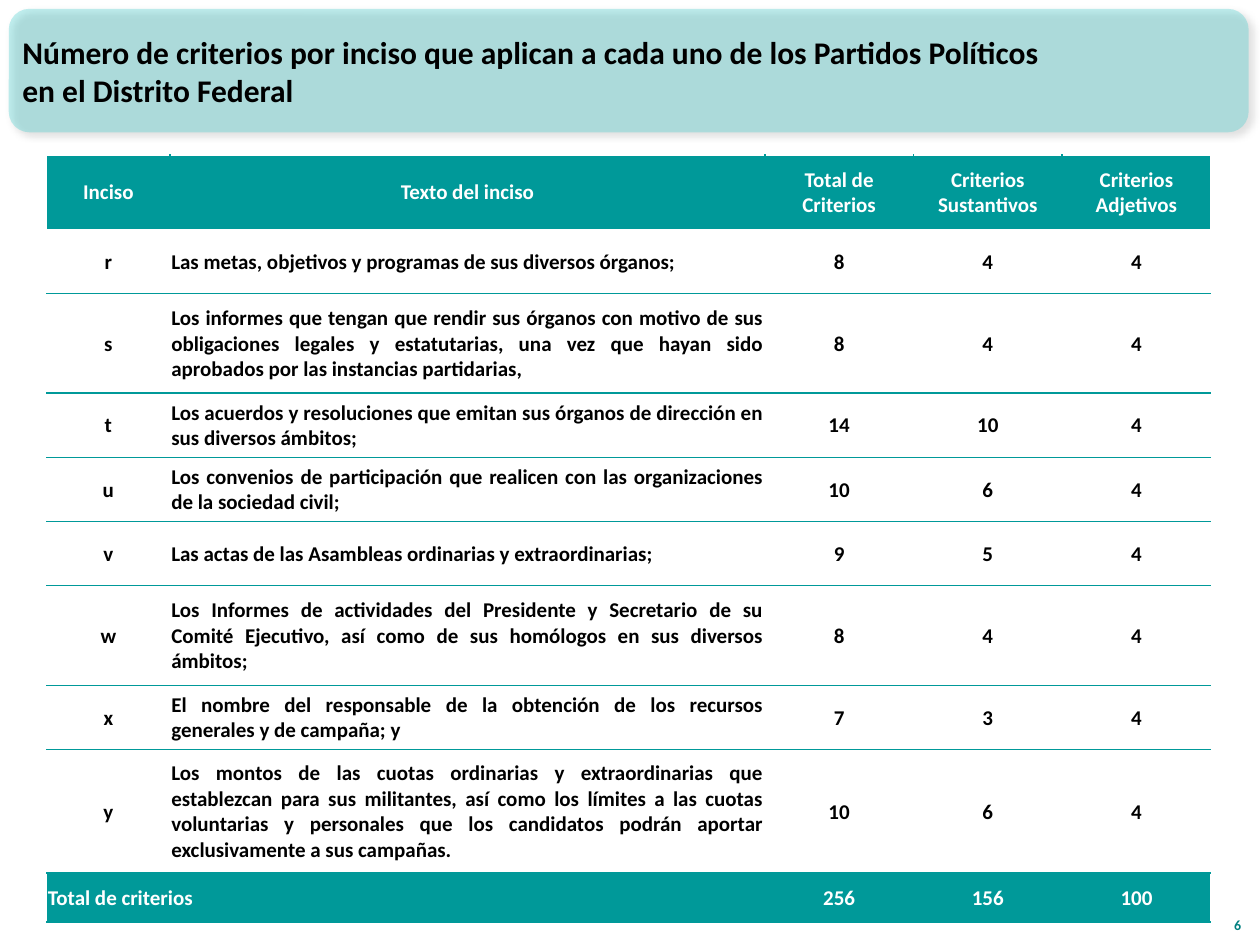
from dataclasses import dataclass

from lxml.etree import SubElement
from pptx import Presentation
from pptx.dml.color import RGBColor
from pptx.enum.shapes import MSO_SHAPE
from pptx.enum.text import MSO_ANCHOR, PP_ALIGN
from pptx.oxml.ns import qn
from pptx.util import Inches, Pt


@dataclass(frozen=True)
class Theme:
    face: str = "Calibri"
    teal: str = "009999"
    aqua: str = "33CCCC"
    deep: str = "008080"
    white: str = "FFFFFF"
    black: str = "000000"
    title: int = 18
    body: int = 12
    small: int = 8


THEME = Theme()
WIDTHS = [0.98, 4.72, 1.18, 1.18, 1.18]
HEIGHTS = [0.59, 0.51, 0.79, 0.51, 0.51, 0.51, 0.79, 0.51, 0.98, 0.39]
ROWS = [
    ("Inciso", "Texto del inciso", "Total de Criterios", "Criterios Sustantivos", "Criterios Adjetivos"),
    ("r", "Las metas, objetivos y programas de sus diversos órganos;", 8, 4, 4),
    ("s", "Los informes que tengan que rendir sus órganos con motivo de sus obligaciones legales y "
          "estatutarias, una vez que hayan sido aprobados por las instancias partidarias,", 8, 4, 4),
    ("t", "Los acuerdos y resoluciones que emitan sus órganos de dirección en sus diversos ámbitos;", 14, 10, 4),
    ("u", "Los convenios de participación que realicen con las organizaciones de la sociedad civil;", 10, 6, 4),
    ("v", "Las actas de las Asambleas ordinarias y extraordinarias;", 9, 5, 4),
    ("w", "Los Informes de actividades del Presidente y Secretario de su Comité Ejecutivo, "
          "así como de sus homólogos en sus diversos ámbitos;", 8, 4, 4),
    ("x", "El nombre del responsable de la obtención de los recursos generales y de campaña; y", 7, 3, 4),
    ("y", "Los montos de las cuotas ordinarias y extraordinarias que establezcan para sus militantes, "
          "así como los límites a las cuotas voluntarias y personales que los candidatos podrán aportar "
          "exclusivamente a sus campañas.", 10, 6, 4),
    ("Total de criterios", "", 256, 156, 100),
]


def apply(item, values):
    for name, value in values.items():
        setattr(item, name, value)


def write(frame, text, size, color, align):
    frame.text = text
    line = frame.paragraphs[0]
    line.alignment = align
    apply(line.font, {"name": THEME.face, "size": Pt(size), "bold": True})
    line.font.color.rgb = RGBColor.from_string(color)


def add_label(slide, box, text, size, color, align, anchor):
    frame = slide.shapes.add_textbox(*map(Inches, box)).text_frame
    apply(frame, {"word_wrap": True, "vertical_anchor": anchor})
    write(frame, text, size, color, align)


def add_tint(parent, color, alpha):
    tint = SubElement(parent, qn("a:srgbClr"), val=color)
    SubElement(tint, qn("a:alpha"), val=str(alpha * 1000))


def add_banner(slide, box):
    shape = slide.shapes.add_shape(MSO_SHAPE.ROUNDED_RECTANGLE, *map(Inches, box))
    shape.shadow.inherit = False
    shape.line.fill.background()
    shape.fill.solid()
    props = shape.element.spPr
    fill = props.find(qn("a:solidFill"))
    fill.clear()
    add_tint(fill, THEME.aqua, 30)
    shade = SubElement(props.find(qn("a:effectLst")), qn("a:outerShdw"),
                       blurRad=str(Pt(4)), dist=str(Pt(3)), dir="2700000",
                       algn="tl", rotWithShape="0")
    add_tint(shade, THEME.black, 40)


def add_edge(cell, side, color, width):
    edge = SubElement(cell._tc.get_or_add_tcPr(), qn(f"a:ln{side}"), w=str(Pt(width)))
    if color:
        fill = SubElement(edge, qn("a:solidFill"))
        SubElement(fill, qn("a:srgbClr"), val=color)
    else:
        SubElement(edge, qn("a:noFill"))


def edge_cell(cell, row, col):
    inner = THEME.teal if row == 0 else None
    edges = {
        "L": (THEME.white, 0.75) if col == 0 else (inner, 1),
        "R": (THEME.white, 0.75) if col == len(WIDTHS) - 1 else (inner, 1),
        "T": (THEME.white, 0.75) if row == 0 else (None if row == 1 else THEME.teal, 1),
        "B": (None if row == 0 else THEME.teal, 1),
    }
    for side, (color, width) in edges.items():
        add_edge(cell, side, color, width)


def fill_cell(cell, text, row, col):
    band = row in (0, len(ROWS) - 1)
    apply(cell, {"margin_left": Inches(0.01), "margin_right": Inches(0.01),
                 "margin_top": Inches(0.01), "margin_bottom": 0,
                 "vertical_anchor": MSO_ANCHOR.MIDDLE})
    edge_cell(cell, row, col)
    if band:
        cell.fill.solid()
        cell.fill.fore_color.rgb = RGBColor.from_string(THEME.teal)
    else:
        cell.fill.background()
    align = PP_ALIGN.CENTER
    if cell.is_merge_origin:
        align = PP_ALIGN.LEFT
    elif col == 1 and not band:
        align = PP_ALIGN.JUSTIFY
    write(cell.text_frame, str(text), THEME.body, THEME.white if band else THEME.black, align)


def add_grid(slide, left, top):
    size = map(Inches, (left, top, sum(WIDTHS), sum(HEIGHTS)))
    table = slide.shapes.add_table(len(ROWS), len(WIDTHS), *size).table
    apply(table, {"first_row": False, "horz_banding": False})
    for col, width in zip(table.columns, WIDTHS):
        col.width = Inches(width)
    for row, height in zip(table.rows, HEIGHTS):
        row.height = Inches(height)
    last = len(ROWS) - 1
    table.cell(last, 0).merge(table.cell(last, 1))
    for row, texts in enumerate(ROWS):
        for col, text in enumerate(texts):
            fill_cell(table.cell(row, col), text, row, col)


def main():
    deck = Presentation()
    apply(deck, {"slide_width": Inches(10), "slide_height": Inches(7.5)})
    slide = deck.slides.add_slide(deck.slide_layouts[6])
    add_banner(slide, (0.07, 0.07, 9.84, 0.98))
    add_label(slide, (9.55, 7.06, 0.4, 0.4), "6", THEME.small, THEME.deep,
              PP_ALIGN.RIGHT, MSO_ANCHOR.BOTTOM)
    add_grid(slide, 0.37, 1.23)
    add_label(slide, (0.08, 0.09, 8.27, 0.94),
              "Número de criterios por inciso que aplican a cada uno de los Partidos Políticos "
              "en el Distrito Federal",
              THEME.title, THEME.black, PP_ALIGN.LEFT, MSO_ANCHOR.MIDDLE)
    deck.save("out.pptx")


if __name__ == "__main__":
    main()
